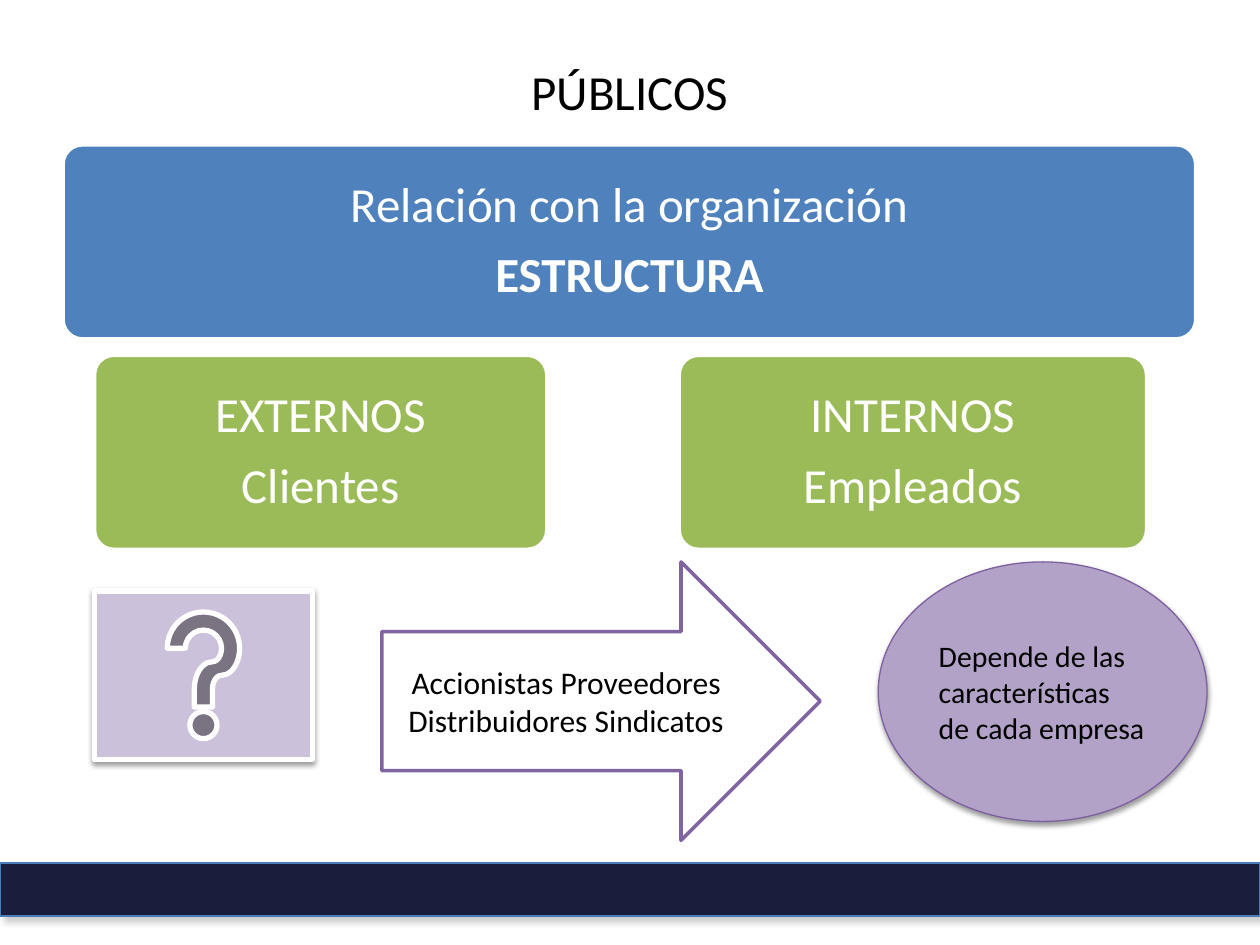
from lxml import etree
from pptx import Presentation
from pptx.dml.color import RGBColor
from pptx.enum.shapes import MSO_SHAPE
from pptx.enum.text import MSO_ANCHOR, PP_ALIGN
from pptx.oxml.ns import qn
from pptx.util import Pt

ROUND = MSO_SHAPE.ROUNDED_RECTANGLE
ARROW = MSO_SHAPE.RIGHT_ARROW
HELP = MSO_SHAPE.ACTION_BUTTON_HELP
OVAL = MSO_SHAPE.OVAL
RECT = MSO_SHAPE.RECTANGLE
MID = MSO_ANCHOR.MIDDLE
MITTE = PP_ALIGN.CENTER
LEFT = PP_ALIGN.LEFT

PX = 9144
HUES = {
    "white": "FFFFFF", "black": "000000", "blue": "4F81BD", "green": "9BBB59",
    "plum": "8064A2", "pale": "CCC1DA", "mauve": "B3A2C7", "edge": "7D60A0",
    "navy": "191E3C", "rim": "4A7EBB", "grey": "808080",
}
SOFT = ("black", 38, 3.1, 1.6, 90)
HARD = ("grey", 40, 4, 3, 45)


def draw(kind, box, fill, line, width, shade=None):
    shape = slide.shapes.add_shape(kind, *[n * PX for n in box])
    shape.fill.solid()
    shape.fill.fore_color.rgb = RGBColor.from_string(HUES[fill])
    shape.line.color.rgb = RGBColor.from_string(HUES[line])
    shape.line.width = Pt(width)
    shape.shadow.inherit = False
    if shade:
        hue, alpha, blur, dist, angle = shade
        effects = shape._element.spPr.find(qn("a:effectLst"))
        outer = etree.SubElement(
            effects, qn("a:outerShdw"), blurRad=str(Pt(blur)), dist=str(Pt(dist)),
            dir=str(angle * 60000), algn="t", rotWithShape="0")
        color = etree.SubElement(outer, qn("a:srgbClr"), val=HUES[hue])
        etree.SubElement(color, qn("a:alpha"), val=str(alpha * 1000))
    return shape


def write(shape, lines, size, hue, align=MITTE):
    frame = shape.text_frame
    frame.word_wrap = True
    frame.vertical_anchor = MID
    frame.text = "\n".join(lines)
    for para in frame.paragraphs:
        para.alignment = align
        para.font.name = "Calibri"
        para.font.size = Pt(size)
        para.font.color.rgb = RGBColor.from_string(HUES[hue])
    return frame


deck = Presentation()
deck.slide_width = 1000 * PX
deck.slide_height = 750 * PX
slide = deck.slides.add_slide(deck.slide_layouts[6])

arrow = draw(ARROW, (303, 446, 348, 221), "white", "plum", 2)
write(arrow, ["Accionistas Proveedores", "Distribuidores Sindicatos"], 18, "black")

title = slide.shapes.add_textbox(50 * PX, 30 * PX, 900 * PX, 85 * PX)
write(title, ["PÚBLICOS"], 28, "black")

cards = [
    ((50, 115, 899, 154), "blue", ["Relación con la organización", "ESTRUCTURA"]),
    ((75, 282, 359, 154), "green", ["EXTERNOS", "Clientes"]),
    ((539, 282, 371, 154), "green", ["INTERNOS", "Empleados"]),
]
for box, fill, lines in cards:
    card = draw(ROUND, box, fill, "white", 2)
    card.adjustments[0] = 0.1
    frame = write(card, lines, 28, "white")
    frame.margin_left = frame.margin_right = 12 * PX
    frame.margin_top = frame.margin_bottom = 12 * PX
    for para in frame.paragraphs:
        para.line_spacing = 0.9
        para.space_after = Pt(10)
        para.font.bold = para.text == "ESTRUCTURA"

draw(HELP, (75, 469, 173, 134), "pale", "white", 3, SOFT)

oval = draw(OVAL, (697, 446, 261, 206), "mauve", "edge", 0.75, SOFT)
write(oval, ["Depende de las características de cada empresa"], 17, "black", LEFT)

draw(RECT, (0, 685, 1000, 42), "navy", "rim", 0.75, HARD)

deck.save("out.pptx")
